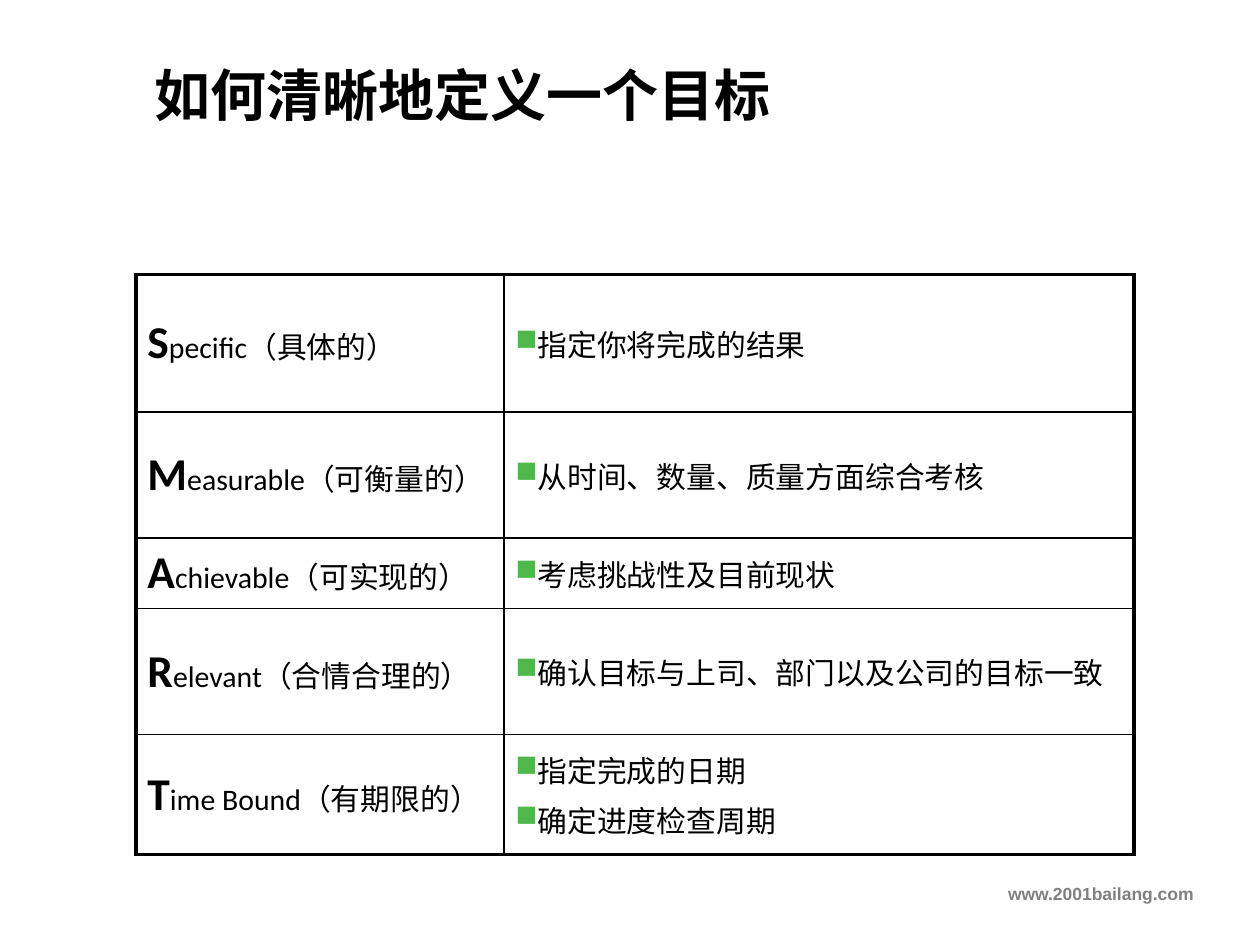
from lxml.etree import SubElement
from pptx import Presentation
from pptx.dml.color import RGBColor
from pptx.enum.text import MSO_ANCHOR as Anchor, PP_ALIGN as Align
from pptx.oxml.ns import qn
from pptx.util import Inches, Pt

BLACK = RGBColor(0, 0, 0)
GREY = RGBColor(0x80, 0x80, 0x80)
GREEN = RGBColor(0x4C, 0xB9, 0x48)
GOALS = [
    ("S", "pecific（具体的）", ["指定你将完成的结果"], 1.09),
    ("M", "easurable（可衡量的）", ["从时间、数量、质量方面综合考核"], 1),
    ("A", "chievable（可实现的）", ["考虑挑战性及目前现状"], 0.56),
    ("R", "elevant（合情合理的）", ["确认目标与上司、部门以及公司的目标一致"], 1),
    ("T", "ime Bound（有期限的）", ["指定完成的日期", "确定进度检查周期"], 0.95),
]


def add_span(para, text, size, font="Calibri", color=BLACK, bold=False):
    span = para.add_run()
    span.text = text
    span.font.size = Pt(size)
    span.font.name = font
    span.font.bold = bold
    span.font.color.rgb = color


def set_borders(cell, widths):
    properties = cell._tc.get_or_add_tcPr()
    for side, width in zip("LRTB", widths):
        line = SubElement(properties, qn(f"a:ln{side}"), w=str(Pt(width)))
        fill = SubElement(line, qn("a:solidFill"))
        SubElement(fill, qn("a:srgbClr"), val=str(BLACK))


deck = Presentation()
deck.slide_width, deck.slide_height = Inches(10), Inches(7.5)
page = deck.slides.add_slide(deck.slide_layouts[6])

for text, place, size, color, align, anchor in [
    ("www.2001bailang.com", (0, 6.96, 9.57, 0.35), 10, GREY, Align.RIGHT, Anchor.TOP),
    ("如何清晰地定义一个目标", (1.13, 0.43, 8.75, 0.64), 32, BLACK, Align.LEFT, Anchor.MIDDLE),
]:
    box = page.shapes.add_textbox(*map(Inches, place))
    box.text_frame.word_wrap = True
    box.text_frame.vertical_anchor = anchor
    para = box.text_frame.paragraphs[0]
    para.alignment = align
    add_span(para, text, size, "Arial", color, True)

table = page.shapes.add_table(
    len(GOALS), 2, Inches(1.08), Inches(2.18), Inches(7.92), Inches(4.6)
).table
table.first_row = table.horz_banding = False
table.columns[0].width, table.columns[1].width = Inches(2.92), Inches(5)

for index, (initial, rest, points, height) in enumerate(GOALS):
    table.rows[index].height = Inches(height)
    top = 2.25 if index == 0 else 1
    bottom = 2.25 if index == len(GOALS) - 1 else 1
    term, detail = table.cell(index, 0), table.cell(index, 1)
    for cell, left, right in [(term, 2.25, 1), (detail, 1, 2.25)]:
        cell.vertical_anchor = Anchor.MIDDLE
        cell.margin_left = cell.margin_right = Inches(0.09)
        cell.margin_top = cell.margin_bottom = Inches(0.05)
        set_borders(cell, (left, right, top, bottom))
        cell.fill.background()

    para = term.text_frame.paragraphs[0]
    add_span(para, initial, 26, bold=True)
    add_span(para, rest, 17)

    for order, point in enumerate(points):
        frame = detail.text_frame
        para = frame.add_paragraph() if order else frame.paragraphs[0]
        if order:
            para.space_before = Pt(3.4)
        properties = para._p.get_or_add_pPr()
        bullet_color = SubElement(properties, qn("a:buClr"))
        SubElement(bullet_color, qn("a:srgbClr"), val=str(GREEN))
        SubElement(properties, qn("a:buChar"), char="■")
        add_span(para, point, 17)

deck.save("out.pptx")
